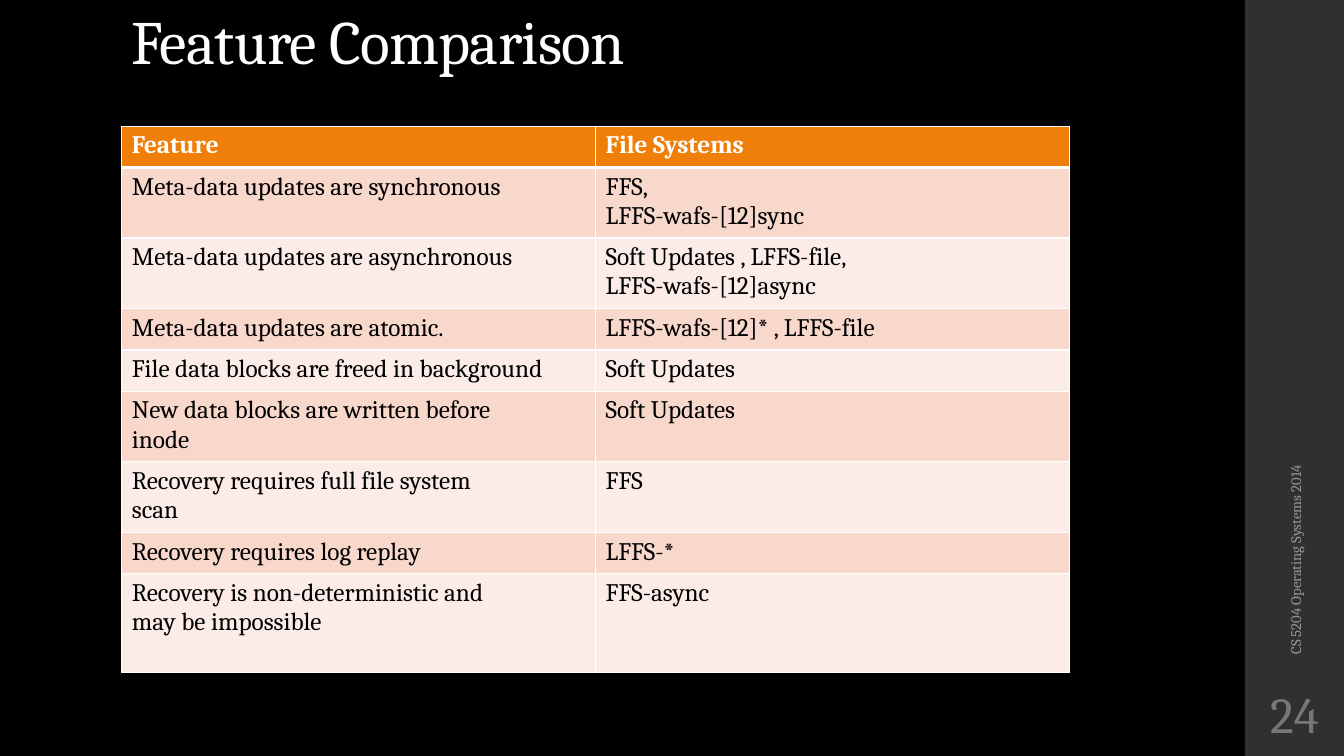
from lxml.etree import SubElement
from pptx import Presentation
from pptx.dml.color import RGBColor
from pptx.enum.shapes import MSO_SHAPE
from pptx.enum.text import MSO_ANCHOR, PP_ALIGN
from pptx.oxml import parse_xml
from pptx.oxml.ns import nsdecls, qn
from pptx.util import Cm, Pt

TITLE = "Feature Comparison"
COURSE = "CS 5204 Operating Systems 2014"
NUMBER = "24"
ROWS = [
    ("Feature", "File Systems"),
    ("Meta-data updates are synchronous", "FFS,\nLFFS-wafs-[12]sync"),
    ("Meta-data updates are asynchronous",
     "Soft Updates , LFFS-file,\nLFFS-wafs-[12]async"),
    ("Meta-data updates are atomic.", "LFFS-wafs-[12]* , LFFS-file"),
    ("File data blocks are freed in background", "Soft Updates"),
    ("New data blocks are written before\ninode", "Soft Updates"),
    ("Recovery requires full file system\nscan", "FFS"),
    ("Recovery requires log replay", "LFFS-*"),
    ("Recovery is non-deterministic and\nmay be impossible", "FFS-async"),
]
FONT = "Cambria"
COLORS = {
    "back": "000000", "side": "303030", "white": "FFFFFF", "ink": "000000",
    "head": "F07F09", "odd": "F9D8CC", "even": "FCECE7",
    "course": "969696", "number": "777777",
}
HEIGHTS = {1: 1.04, 2: 1.73}  # cm, by number of text lines
LAST = 2.48
LEFT, TOP, COLUMN = 3.07, 3.18, 11.94
SIDE, SIDE_WIDTH = 31.37, 2.5


def rgb(name):
    return RGBColor.from_string(COLORS[name])


def style(para, size, color, bold=False):
    font = para.font
    font.name, font.size, font.bold = FONT, Pt(size), bold
    font.color.rgb = rgb(color)


def add_text(slide, text, box, size, color, anchor=MSO_ANCHOR.MIDDLE):
    shape = slide.shapes.add_textbox(*map(Cm, box))
    frame = shape.text_frame
    frame.word_wrap = True
    frame.vertical_anchor = anchor
    frame.text = text
    style(frame.paragraphs[0], size, color)
    return shape


def add_borders(cell, row):
    """Draw white cell edges, with a thick rule under the header row."""
    props = cell._tc.get_or_add_tcPr()
    thick = {0: "B", 1: "T"}.get(row)
    for spot, side in enumerate("LRTB"):
        width = Pt(3 if side == thick else 1)
        props.insert(spot, parse_xml(
            f'<a:ln{side} {nsdecls("a")} w="{width}"><a:solidFill>'
            f'<a:srgbClr val="{COLORS["white"]}"/></a:solidFill></a:ln{side}>'))


def add_grid(slide):
    heights = [HEIGHTS[max(text.count("\n") + 1 for text in row)]
               for row in ROWS]
    heights[-1] = LAST
    table = slide.shapes.add_table(
        len(ROWS), 2, Cm(LEFT), Cm(TOP), Cm(2 * COLUMN), Cm(sum(heights))).table
    for col in table.columns:
        col.width = Cm(COLUMN)
    for r, row in enumerate(ROWS):
        table.rows[r].height = Cm(heights[r])
        fill = "head" if r == 0 else "odd" if r % 2 else "even"
        for c, text in enumerate(row):
            cell = table.cell(r, c)
            cell.text = text
            cell.fill.solid()
            cell.fill.fore_color.rgb = rgb(fill)
            add_borders(cell, r)
            for para in cell.text_frame.paragraphs:
                style(para, 18, "ink" if r else "white", bold=r == 0)


def main():
    deck = Presentation()
    deck.slide_width, deck.slide_height = Cm(33.87), Cm(19.05)
    slide = deck.slides.add_slide(deck.slide_layouts[6])
    slide.background.fill.solid()
    slide.background.fill.fore_color.rgb = rgb("back")

    side = slide.shapes.add_shape(
        MSO_SHAPE.RECTANGLE, Cm(SIDE), 0, Cm(SIDE_WIDTH), deck.slide_height)
    side.shadow.inherit = False
    side.fill.solid()
    side.fill.fore_color.rgb = rgb("side")
    side.line.fill.background()

    title = add_text(slide, TITLE, (LEFT, 0, 26.97, 2.08), 44, "white",
                     MSO_ANCHOR.BOTTOM)
    para = title.text_frame.paragraphs[0]
    para.line_spacing = 0.9
    para.runs[0].font._element.set("spc", "-50")

    add_grid(slide)

    course = add_text(slide, COURSE, (27.66, 11.25, 9.96, 1.02), 10.5, "course")
    course.rotation = 270

    number = add_text(slide, NUMBER, (SIDE, 17.15, SIDE_WIDTH, 1.65), 36,
                      "number")
    frame = number.text_frame
    frame.margin_left = frame.margin_right = Cm(0.13)
    frame.paragraphs[0].alignment = PP_ALIGN.CENTER

    deck.save("out.pptx")


if __name__ == "__main__":
    main()
